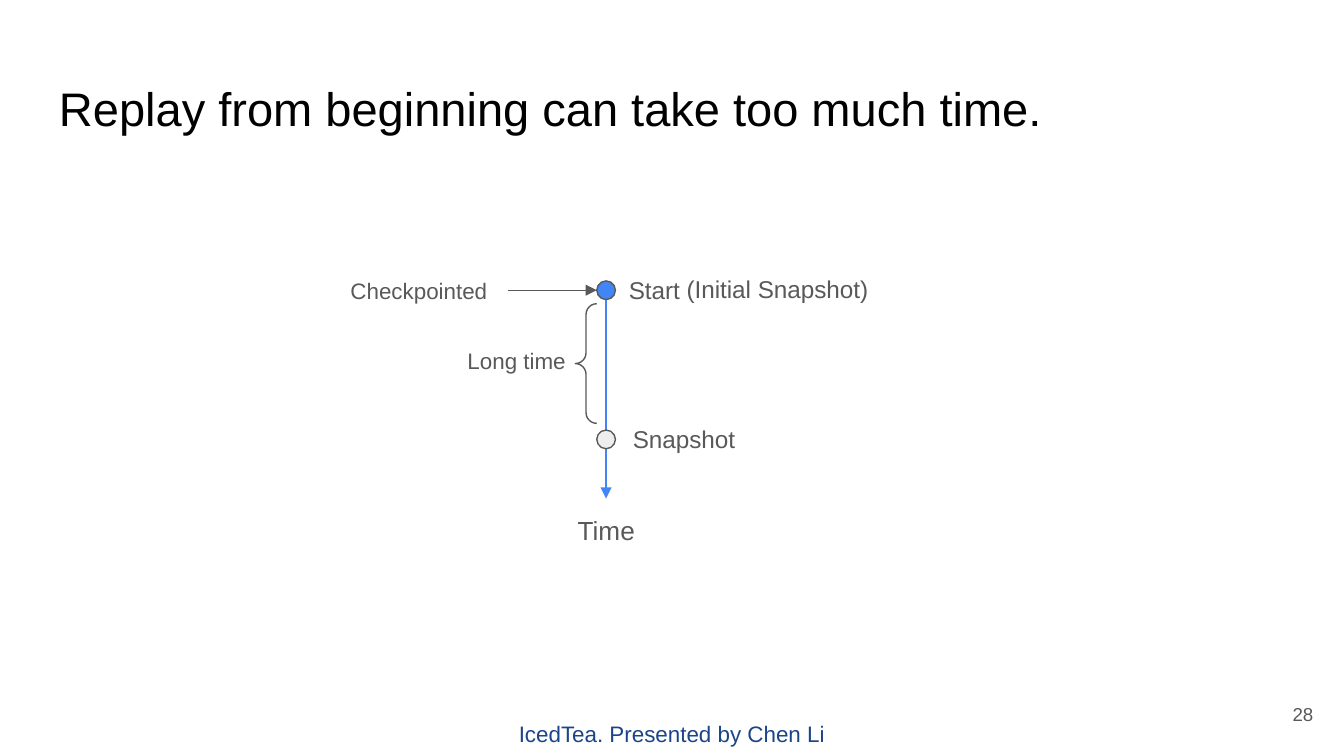
from dataclasses import dataclass

from lxml.etree import SubElement
from pptx import Presentation
from pptx.dml.color import RGBColor
from pptx.enum.shapes import MSO_CONNECTOR, MSO_SHAPE
from pptx.enum.text import MSO_ANCHOR, PP_ALIGN
from pptx.oxml.ns import qn
from pptx.util import Pt


@dataclass(frozen=True)
class Theme:
    font: str = "Arial"
    title: RGBColor = RGBColor(0, 0, 0)
    body: RGBColor = RGBColor(0x59, 0x59, 0x59)
    footer: RGBColor = RGBColor(0x1C, 0x45, 0x87)
    accent: RGBColor = RGBColor(0x42, 0x85, 0xF4)
    pale: RGBColor = RGBColor(0xEE, 0xEE, 0xEE)
    title_size: float = 25.2
    axis_size: float = 14
    event_size: float = 13
    note_size: float = 12
    number_size: float = 10
    stroke: float = 0.75
    inset: float = 7.2


THEME = Theme()


@dataclass(frozen=True)
class Box:
    left: float
    top: float
    width: float
    height: float

    def inner(self, left, top, width, height):
        return Box(self.left + left, self.top + top, width, height)

    def lengths(self):
        return Pt(self.left), Pt(self.top), Pt(self.width), Pt(self.height)


def add_label(slide, box, text, size, color=THEME.body,
              align=PP_ALIGN.LEFT, anchor=MSO_ANCHOR.TOP):
    frame = slide.shapes.add_textbox(*box.lengths()).text_frame
    frame.word_wrap = True
    frame.vertical_anchor = anchor
    frame.margin_left = frame.margin_right = Pt(THEME.inset)
    frame.margin_top = frame.margin_bottom = Pt(THEME.inset)
    paragraph = frame.paragraphs[0]
    paragraph.text = text
    paragraph.alignment = align
    paragraph.font.name = THEME.font
    paragraph.font.size = Pt(size)
    paragraph.font.color.rgb = color


def add_arrow(slide, start, end, color):
    arrow = slide.shapes.add_connector(
        MSO_CONNECTOR.STRAIGHT, *map(Pt, start), *map(Pt, end))
    arrow.line.color.rgb = color
    arrow.line.width = Pt(THEME.stroke)
    SubElement(arrow.line._get_or_add_ln(), qn("a:tailEnd"), type="triangle")
    SubElement(arrow._element.spPr, qn("a:effectLst"))


def add_outlined(slide, preset, box, fill=None):
    shape = slide.shapes.add_shape(preset, *box.lengths())
    shape.shadow.inherit = False
    if fill is None:
        shape.fill.background()
    else:
        shape.fill.solid()
        shape.fill.fore_color.rgb = fill
    shape.line.color.rgb = THEME.body
    shape.line.width = Pt(THEME.stroke)
    return shape


def add_footer(slide, box):
    add_label(slide, box, "IcedTea. Presented by Chen Li", THEME.note_size,
              THEME.footer, PP_ALIGN.CENTER, MSO_ANCHOR.MIDDLE)


def add_title(slide, box):
    add_label(slide, box, "Replay from beginning can take too much time.",
              THEME.title_size, THEME.title)


def add_page_number(slide, box):
    add_label(slide, box, "28", THEME.number_size,
              align=PP_ALIGN.RIGHT, anchor=MSO_ANCHOR.MIDDLE)


def add_timeline(slide, box):
    axis = 144.7
    start_y, snapshot_y, end_y = 16.5, 96.4, 128.1
    radius = 5

    axis_x = box.left + axis
    add_arrow(slide, (axis_x, box.top + start_y + radius),
              (axis_x, box.top + end_y), THEME.accent)
    for center_y, fill in ((start_y, THEME.accent), (snapshot_y, THEME.pale)):
        add_outlined(slide, MSO_SHAPE.OVAL,
                     box.inner(axis - radius, center_y - radius,
                               2 * radius, 2 * radius), fill)

    brace = add_outlined(slide, MSO_SHAPE.RIGHT_BRACE,
                         box.inner(128.2, 23.7, 11.5, 64.1))
    brace.rotation = 180
    brace.adjustments[0] = brace.adjustments[1] = 0.5

    checkpoint_y = box.top + start_y
    add_arrow(slide, (box.left + 92, checkpoint_y),
              (axis_x - radius, checkpoint_y), THEME.body)

    for text, size, place in (
        ("Time", THEME.axis_size, (122.4, 129.6, 62.6, 31.7)),
        ("Start", THEME.event_size, (149.8, 1.4, 62.6, 30.2)),
        ("(Initial Snapshot)", THEME.event_size, (180.7, 0.7, 113.8, 30.2)),
        ("Snapshot", THEME.event_size, (151.9, 81.3, 113.8, 30.2)),
        ("Checkpointed", THEME.note_size, (0.7, 2.1, 91.4, 28.8)),
    ):
        add_label(slide, box.inner(*place), text, size)
    add_label(slide, box.inner(51.1, 42.4, 91.4, 23), "Long time",
              THEME.note_size, align=PP_ALIGN.CENTER, anchor=MSO_ANCHOR.MIDDLE)


def main():
    presentation = Presentation()
    presentation.slide_width = Pt(720)
    presentation.slide_height = Pt(405)
    slide = presentation.slides.add_slide(presentation.slide_layouts[6])
    add_footer(slide, Box(0, 377.3, 720, 31.7))
    add_title(slide, Box(24.5, 35.3, 671, 45.4))
    add_page_number(slide, Box(667.4, 367.2, 43.2, 31))
    add_timeline(slide, Box(180, 139, 295, 162))
    presentation.save("out.pptx")


if __name__ == "__main__":
    main()
